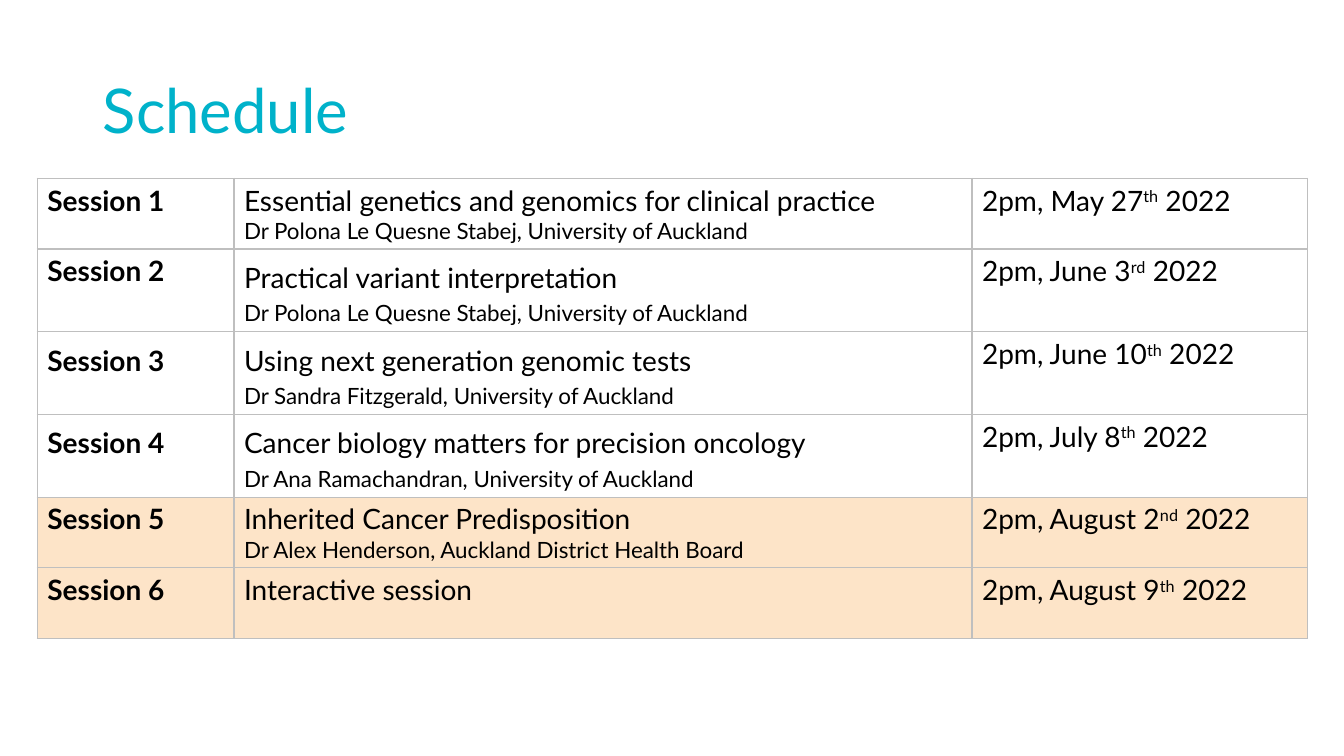
import pptx
import pptx.dml.color
import pptx.enum.text
import pptx.oxml
import pptx.oxml.ns
import pptx.util

Inches = pptx.util.Inches
Pt = pptx.util.Pt
Align = pptx.enum.text.PP_ALIGN
FONT = "Lato"
COLORS = {"title": "00B2CA", "text": "000000", "line": "BFBFBF", "late": "FDE4C8"}
COLS = (1.95, 7.32, 3.33)
LEFT, FULL = Align.LEFT, Align.JUSTIFY
STABEJ = "Dr Polona Le Quesne Stabej, University of Auckland"
ROWS = (
    ("Essential genetics and genomics for clinical practice", STABEJ,
     ("2pm, May 27", "th"), (FULL, 1), (LEFT, 1), None),
    ("Practical variant interpretation", STABEJ,
     ("2pm, June 3", "rd"), (FULL, 1), (LEFT, 1.2), None),
    ("Using next generation genomic tests", "Dr Sandra Fitzgerald, University of Auckland",
     ("2pm, June 10", "th"), (FULL, 1.2), (FULL, 1.2), None),
    ("Cancer biology matters for precision oncology", "Dr Ana Ramachandran, University of Auckland",
     ("2pm, July 8", "th"), (FULL, 1.2), (FULL, 1.2), None),
    ("Inherited Cancer Predisposition", "Dr Alex Henderson, Auckland District Health Board",
     ("2pm, August 2", "nd"), (LEFT, 1), (LEFT, 1), "late"),
    ("Interactive session", None,
     ("2pm, August 9", "th"), (LEFT, 1), (LEFT, 1), "late"),
)


def style(run, size, color="text", bold=False):
    """Set the font of a run."""
    font = run.font
    font.name, font.size, font.bold = FONT, Pt(size), bold
    font.color.rgb = pptx.dml.color.RGBColor.from_string(COLORS[color])


def write(cell, lines, form, bold=False):
    """Write lines of text and size pairs into a cell."""
    cell.text_frame.text = "\n".join(text for text, size in lines)
    for para, (text, size) in zip(cell.text_frame.paragraphs, lines):
        para.alignment, para.line_spacing = form
        style(para.runs[0], size, bold=bold)


def date(cell, day, suffix):
    """Write a date with a raised suffix."""
    para = cell.text_frame.paragraphs[0]
    for text in (day, suffix, " 2022"):
        run = para.add_run()
        run.text = text
        style(run, 20)
    para.runs[1].font._element.set("baseline", "30000")


def frame(cell, fill):
    """Fill a cell and draw its four borders."""
    if fill:
        cell.fill.solid()
        cell.fill.fore_color.rgb = pptx.dml.color.RGBColor.from_string(COLORS[fill])
    else:
        cell.fill.background()
    props = cell._tc.get_or_add_tcPr()
    for spot, side in enumerate("LRTB"):
        props.insert(spot, pptx.oxml.parse_xml(
            f'<a:ln{side} {pptx.oxml.ns.nsdecls("a")} w="{Pt(1)}"><a:solidFill>'
            f'<a:srgbClr val="{COLORS["line"]}"/></a:solidFill></a:ln{side}>'))


def head(slide, text):
    """Place and format the title."""
    title = slide.shapes.title
    title.left, title.top = Inches(0.92), Inches(0.4)
    title.width, title.height = Inches(11.5), Inches(1.45)
    title.text_frame.text = text
    title.text_frame.vertical_anchor = pptx.enum.text.MSO_ANCHOR.MIDDLE
    para = title.text_frame.paragraphs[0]
    para.alignment, para.line_spacing = LEFT, 0.9
    style(para.runs[0], 44, "title")


def plan(slide):
    """Build the table of sessions."""
    highs = [0.82 if row[4][1] > 1 else 0.7 for row in ROWS]
    table = slide.shapes.add_table(
        len(ROWS), len(COLS), Inches(0.37), Inches(1.77),
        Inches(sum(COLS)), Inches(sum(highs))).table
    table.first_row = table.horz_banding = False
    for col, width in zip(table.columns, COLS):
        col.width = Inches(width)
    for num, (topic, host, day, first, form, fill) in enumerate(ROWS):
        table.rows[num].height = Inches(highs[num])
        cells = table.rows[num].cells
        write(cells[0], [(f"Session {num + 1}", 20)], first, bold=True)
        write(cells[1], [(topic, 20)] + ([(host, 16)] if host else []), form)
        date(cells[2], *day)
        for cell in cells:
            frame(cell, fill)


def main():
    """Build and save the slide."""
    deck = pptx.Presentation()
    deck.slide_width, deck.slide_height = Inches(13.33), Inches(7.5)
    slide = deck.slides.add_slide(deck.slide_layouts[5])
    plan(slide)
    head(slide, "Schedule")
    deck.save("out.pptx")


if __name__ == "__main__":
    main()
